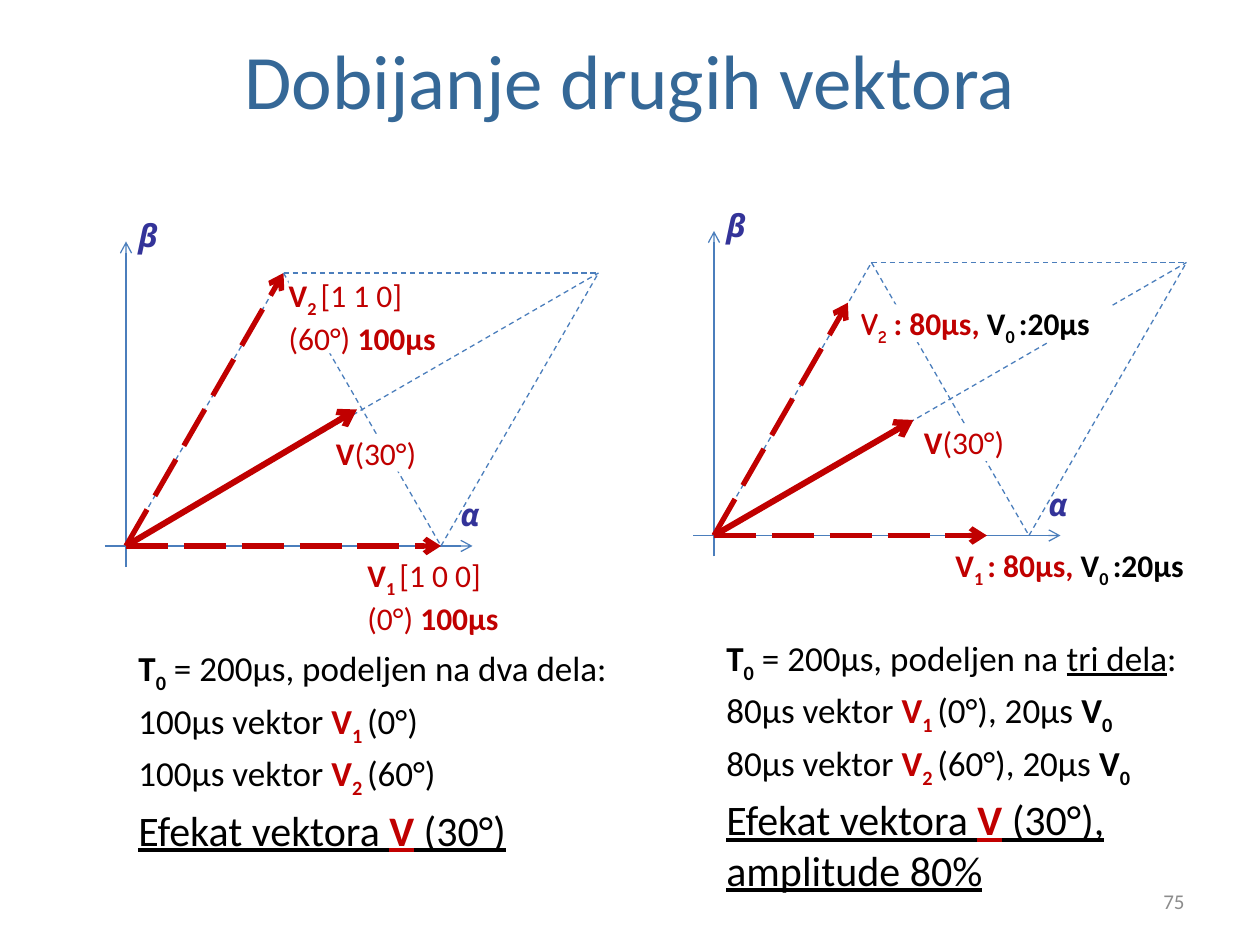
import pptx
import pptx.dml.color
import pptx.enum.dml
import pptx.enum.shapes
import pptx.enum.text
import pptx.oxml
import pptx.oxml.ns
import pptx.util

Pt = pptx.util.Pt
RGBColor = pptx.dml.color.RGBColor
DASH = pptx.enum.dml.MSO_LINE.DASH
LONG_DASH = pptx.enum.dml.MSO_LINE.LONG_DASH
ALIGN = pptx.enum.text.PP_ALIGN
MIDDLE = pptx.enum.text.MSO_ANCHOR.MIDDLE

BLUE = RGBColor(0x4B, 0x7E, 0xBC)
TITLE_BLUE = RGBColor(0x35, 0x68, 0x97)
NAVY = RGBColor(0x33, 0x33, 0x99)
RED = RGBColor(0xC0, 0x00, 0x00)
BLACK = RGBColor(0x00, 0x00, 0x00)
WHITE = RGBColor(0xFF, 0xFF, 0xFF)
GRAY = RGBColor(0x8C, 0x8C, 0x8C)

ORIGIN = (0, 0)
V1_CORNER = (180, 0)
V2_CORNER = (90, -156)
FAR_CORNER = (270, -156)


def append_element(parent, tag):
    element = pptx.oxml.parse_xml(f"<{tag} {pptx.oxml.ns.nsdecls('a')}/>")
    parent.append(element)
    return element


def format_font(font, size, color, name="Calibri"):
    font.size = Pt(size)
    font.name = name
    font.color.rgb = color


def add_line(shapes, origin, start, end, color=BLUE, width=0.75, dash=None, arrow=False):
    x, y = origin
    line = shapes.add_connector(
        pptx.enum.shapes.MSO_CONNECTOR.STRAIGHT,
        Pt(x + start[0]), Pt(y + start[1]), Pt(x + end[0]), Pt(y + end[1]))
    line.line.color.rgb = color
    line.line.width = Pt(width)
    if dash is not None:
        line.line.dash_style = dash
    if arrow:
        append_element(line.line._get_or_add_ln(), "a:tailEnd").set("type", "arrow")
    append_element(line._element.spPr, "a:effectLst")


def add_vector(shapes, origin, end, width=3, dash=LONG_DASH):
    add_line(shapes, origin, ORIGIN, end, RED, width, dash, True)


def add_runs(paragraph, runs, size):
    for text, style in runs:
        run = paragraph.add_run()
        run.text = text
        format_font(run.font, size, RED if "r" in style else BLACK,
                    "Comic Neue" if "c" in style else "Calibri")
        run.font.bold = "b" in style
        run.font.underline = "u" in style
        if "s" in style:
            run.font._element.set("baseline", "-25000")


def add_text(shapes, origin, place, paragraphs, size, inset=True, fill=None):
    left, top, width, height = place
    box = shapes.add_textbox(Pt(origin[0] + left), Pt(origin[1] + top), Pt(width), Pt(height))
    frame = box.text_frame
    frame.word_wrap = False
    if not inset:
        frame.margin_left = frame.margin_right = frame.margin_top = frame.margin_bottom = 0
    if fill is not None:
        box.fill.solid()
        box.fill.fore_color.rgb = fill
    for index, runs in enumerate(paragraphs):
        paragraph = frame.add_paragraph() if index else frame.paragraphs[0]
        add_runs(paragraph, runs, size)
    return box


def add_label(shapes, origin, place, paragraphs, fill=None):
    box = add_text(shapes, origin, place, paragraphs, 18, False, fill)
    for paragraph in box.text_frame.paragraphs[1:]:
        paragraph.alignment = ALIGN.CENTER


def add_axis_name(shapes, origin, place, name):
    box = add_text(shapes, origin, place, [[(name, "bc")]], 18)
    font = box.text_frame.paragraphs[0].runs[0].font
    font.color.rgb = NAVY
    font.italic = True


def add_diagram(shapes, origin, v1, v2, v):
    add_line(shapes, origin, ORIGIN, V2_CORNER, dash=DASH)
    add_line(shapes, origin, (-12, 0), (198, 0), arrow=True)
    add_line(shapes, origin, (0, 12), (0, -174), arrow=True)
    add_axis_name(shapes, origin, (184, -32.5, 26, 29), "α")
    add_axis_name(shapes, origin, (0, -192, 24.5, 29), "β")
    add_vector(shapes, origin, v1)
    add_vector(shapes, origin, v2)
    for start, end in ((V2_CORNER, FAR_CORNER), (V1_CORNER, FAR_CORNER),
                       (ORIGIN, FAR_CORNER), (V2_CORNER, V1_CORNER)):
        add_line(shapes, origin, start, end, dash=DASH)
    add_vector(shapes, origin, v, 3.5, None)
    add_label(shapes, origin, (120, -64, 47.5, 21.5), [[("V", "rb"), ("(30°)", "r")]], WHITE)


def add_notes(shapes, origin, widths, lines):
    for index, (width, runs) in enumerate(zip(widths, lines)):
        add_text(shapes, origin, (0, 54 + 30 * index, width, 31.5), [runs], 20)


def full_label(number, switches, angle):
    return [[("V", "rb"), (number, "rbs"), (" ", "rbs"), (switches, "r")],
            [(f"({angle}) ", "r"), ("100μs", "rb")]]


def reduced_label(number, extra=""):
    return [[("V", "rb" + extra), (number, "rbs" + extra), (" ", "rbs" + extra),
             (": 80μs,", "rb"), (" V", "b"), ("0 ", "bs"), (":20μs", "b")]]


def period_runs(*ending):
    return [("T", "b"), ("0", "bs"), (" = 200μs, podeljen na ", ""), *ending]


def step_runs(time, number, angle, *ending):
    return [(f"{time} vektor ", ""), ("V", "rb"), (f"{number} ", "rbs"), (f"({angle})", ""), *ending]


def effect_runs(ending):
    return [("Efekat vektora ", "u"), ("V", "rbu"), (" ", "bu"), (ending, "u")]


def add_full_amplitude(shapes):
    origin = (72, 312)
    add_diagram(shapes, origin, V1_CORNER, V2_CORNER, (132, -78))
    add_label(shapes, origin, (138, 6, 77, 44), full_label("1", "[1 0 0]", "0°"))
    add_label(shapes, origin, (93, -154, 86.5, 44), full_label("2", "[1 1 0]", "60°"), WHITE)
    add_notes(shapes, origin, (286, 189.5, 201.5), [
        period_runs(("dva dela:", "")),
        step_runs("100μs", "1", "0°"),
        step_runs("100μs", "2", "60°")])
    add_text(shapes, origin, (0, 144, 233, 36), [effect_runs("(30°)")], 24)


def add_reduced_amplitude(shapes):
    origin = (408, 306)
    pause = ((", 20μs ", ""), ("V", "b"), ("0", "bs"))
    add_diagram(shapes, origin, (156, 0), (76.5, -133), (114, -66))
    add_label(shapes, origin, (138, 6, 138, 21.5), reduced_label("1"))
    add_label(shapes, origin, (84, -132, 143, 21.5), reduced_label("2", "c"), WHITE)
    add_notes(shapes, origin, (276, 243.5, 252), [
        period_runs(("tri dela", "u"), (":", "")),
        step_runs("80μs", "1", "0°", *pause),
        step_runs("80μs", "2", "60°", *pause)])
    add_text(shapes, origin, (0, 144, 240, 65.5),
             [effect_runs("(30°),"), [("amplitude 80%", "u")]], 24)


def add_title(slide):
    title = slide.shapes.title
    title.left, title.top, title.width, title.height = Pt(36), Pt(0), Pt(648), Pt(90)
    title.text_frame.text = "Dobijanje drugih vektora"
    title.text_frame.vertical_anchor = MIDDLE
    paragraph = title.text_frame.paragraphs[0]
    paragraph.alignment = ALIGN.CENTER
    format_font(paragraph.runs[0].font, 44, TITLE_BLUE)


def add_page_number(slide):
    box = slide.shapes.add_textbox(Pt(516), Pt(500.5), Pt(168), Pt(28.75))
    box.text_frame.text = "75"
    box.text_frame.word_wrap = True
    box.text_frame.vertical_anchor = MIDDLE
    paragraph = box.text_frame.paragraphs[0]
    paragraph.alignment = ALIGN.RIGHT
    format_font(paragraph.runs[0].font, 12, GRAY)


def main():
    presentation = pptx.Presentation()
    presentation.slide_width, presentation.slide_height = Pt(720), Pt(540)
    slide = presentation.slides.add_slide(presentation.slide_layouts[5])
    add_title(slide)
    add_page_number(slide)
    add_full_amplitude(slide.shapes)
    add_reduced_amplitude(slide.shapes.add_group_shape().shapes)
    presentation.save("out.pptx")


if __name__ == "__main__":
    main()
